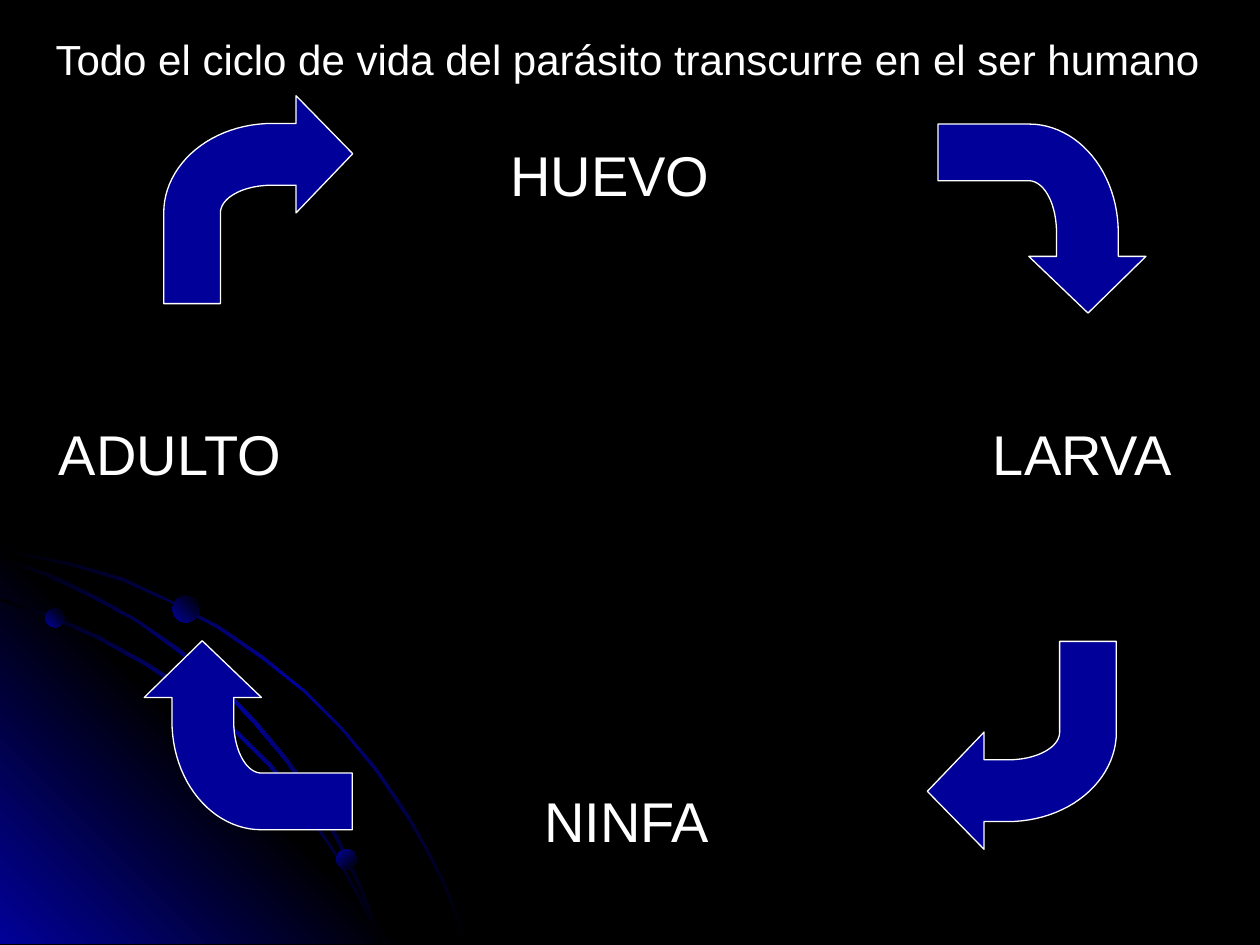
from math import cos, sin, pi
from lxml.etree import SubElement
from pptx import Presentation
from pptx.dml.color import RGBColor
from pptx.enum.shapes import MSO_SHAPE as Shape
from pptx.enum.text import MSO_ANCHOR as Anchor, PP_ALIGN as Align
from pptx.oxml.ns import qn
from pptx.util import Inches, Pt

WIDE, HIGH = 10, 7.5
HEX = {"black": "000000", "blue": "010199", "white": "FFFFFF"}
FONT = "Arial"

# Text: wording, left, top, width, height, size
TITLE = ("Todo el ciclo de vida del parásito transcurre en el ser humano",
         0.29, 0.22, 9.38, 0.51, 24)
STAGES = [("LARVA", 7.76, 3.28, 1.66, 0.63, 32),
          ("HUEVO", 3.95, 1.07, 1.78, 0.63, 32),
          ("NINFA", 4.21, 6.19, 1.53, 0.63, 32),
          ("ADULTO", 0.35, 3.28, 2, 0.63, 32)]

# Bent arrows: left, top, turn
ARROWS = [(1.3, 0.76, 0), (1.22, 5.01, 270), (7.52, 0.91, 90), (7.36, 5.09, 180)]

# Corner decoration: outlines of the orbits and the glow
ORBIT_1 = [
    (0.57, 4.47), (0.28, 4.41), (0, 4.35), (0, 4.38), (0.28, 4.43), (0.56, 4.49),
    (0.97, 4.61), (1.35, 4.78), (1.73, 4.99), (2.08, 5.23), (2.41, 5.49),
    (2.71, 5.79), (2.98, 6.12), (3.23, 6.49), (3.37, 6.73), (3.5, 6.98),
    (3.6, 7.23), (3.7, 7.49), (3.72, 7.49), (3.62, 7.23), (3.52, 6.98),
    (3.39, 6.73), (3.25, 6.48), (3, 6.11), (2.72, 5.78), (2.42, 5.48),
    (2.09, 5.21), (1.74, 4.97), (1.36, 4.77), (0.98, 4.59)]
GLOW = [(3.22, 7.49), (0, 7.49), (0, 4.27)]
ORBIT_2 = [
    (2.85, 7.14), (2.94, 7.32), (3.01, 7.49), (3.03, 7.49), (2.96, 7.3),
    (2.86, 7.12), (2.66, 6.76), (2.42, 6.4), (2.15, 6.06), (1.84, 5.76),
    (1.52, 5.49), (1.17, 5.26), (0.79, 5.05), (0.41, 4.88), (0, 4.75),
    (0, 4.77), (0.39, 4.9), (0.77, 5.07), (1.15, 5.28), (1.5, 5.51),
    (1.83, 5.78), (2.13, 6.08), (2.4, 6.41), (2.65, 6.77)]
ORBIT_3 = [
    (0, 4.42), (0, 4.44), (0.36, 4.57), (0.74, 4.75), (1.09, 4.94), (1.42, 5.18),
    (1.73, 5.44), (2.02, 5.75), (2.27, 6.05), (2.52, 6.41), (2.67, 6.67),
    (2.8, 6.94), (2.92, 7.22), (3.01, 7.49), (3.03, 7.49), (2.94, 7.2),
    (2.82, 6.93), (2.69, 6.65), (2.54, 6.39), (2.29, 6.03), (2.04, 5.73),
    (1.75, 5.43), (1.44, 5.16), (1.11, 4.93), (0.76, 4.73), (0.39, 4.55)]
STREAK = ("black", "blue", "black")
CORNER = [(ORBIT_1, STREAK, 45), (GLOW, ("blue", "black", "blue"), 315),
          (ORBIT_2, STREAK, 45), (ORBIT_3, STREAK, 45)]
# Dots: left, top, size, gradient angle
DOTS = [(0.36, 4.83, 0.15, 315), (2.67, 6.74, 0.16, 45), (1.37, 4.73, 0.21, 315)]


def color(name):
    return RGBColor.from_string(HEX[name])


def trace(slide, points):
    """Closed outline through points in inches."""
    first, *rest = [(Inches(x), Inches(y)) for x, y in points]
    pen = slide.shapes.build_freeform(*first)
    pen.add_line_segments(rest, close=True)
    shape = pen.convert_to_shape()
    shape.shadow.inherit = False
    return shape


def blend(shape, names, angle):
    """Linear gradient with even stops; the angle runs clockwise."""
    shape.fill.gradient()
    shape.fill.gradient_angle = 360 - angle
    stops = next(shape.element.iter(qn("a:gsLst")))
    for stop in list(stops):
        stops.remove(stop)
    for i, name in enumerate(names):
        stop = SubElement(stops, qn("a:gs"), pos=str(100000 * i // (len(names) - 1)))
        SubElement(stop, qn("a:srgbClr"), val=HEX[name])
    shape.line.fill.background()


def bend(rx, ry, start, end, steps=24):
    """Quarter ellipse around the arrow's elbow."""
    turns = [start + (end - start) * i / steps for i in range(steps + 1)]
    return [(0.86 - rx * cos(t), 0.93 - ry * sin(t)) for t in turns]


def arrow(slide, left, top, turn):
    points = [(1.5, 0.46), (1.05, 0), (1.05, 0.22), *bend(0.86, 0.71, pi / 2, 0),
              (0, 1.65), (0.45, 1.65), *bend(0.41, 0.22, 0, pi / 2),
              (1.05, 0.71), (1.05, 0.93)]
    shape = trace(slide, [(left + x, top + y) for x, y in points])
    shape.rotation = turn
    shape.fill.solid()
    shape.fill.fore_color.rgb = color("blue")
    shape.line.color.rgb = color("white")
    shape.line.width = Pt(0.75)


def label(slide, words, left, top, width, height, size):
    box = slide.shapes.add_textbox(*map(Inches, (left, top, width, height)))
    frame = box.text_frame
    frame.word_wrap = False
    frame.vertical_anchor = Anchor.TOP
    frame.text = words
    para = frame.paragraphs[0]
    para.alignment = Align.CENTER
    font = para.runs[0].font
    font.name, font.size = FONT, Pt(size)
    font.color.rgb = color("white")


def main():
    deck = Presentation()
    deck.slide_width, deck.slide_height = Inches(WIDE), Inches(HIGH)
    slide = deck.slides.add_slide(deck.slide_layouts[6])
    slide.background.fill.solid()
    slide.background.fill.fore_color.rgb = color("black")

    # Corner decoration
    for points, names, angle in CORNER:
        blend(trace(slide, points), names, angle)
    for left, top, size, angle in DOTS:
        dot = slide.shapes.add_shape(Shape.OVAL, *map(Inches, (left, top, size, size)))
        dot.shadow.inherit = False
        blend(dot, ("blue", "black"), angle)

    # Life cycle
    for stage in STAGES:
        label(slide, *stage)
    for place in ARROWS:
        arrow(slide, *place)
    label(slide, *TITLE)

    deck.save("out.pptx")


if __name__ == "__main__":
    main()
